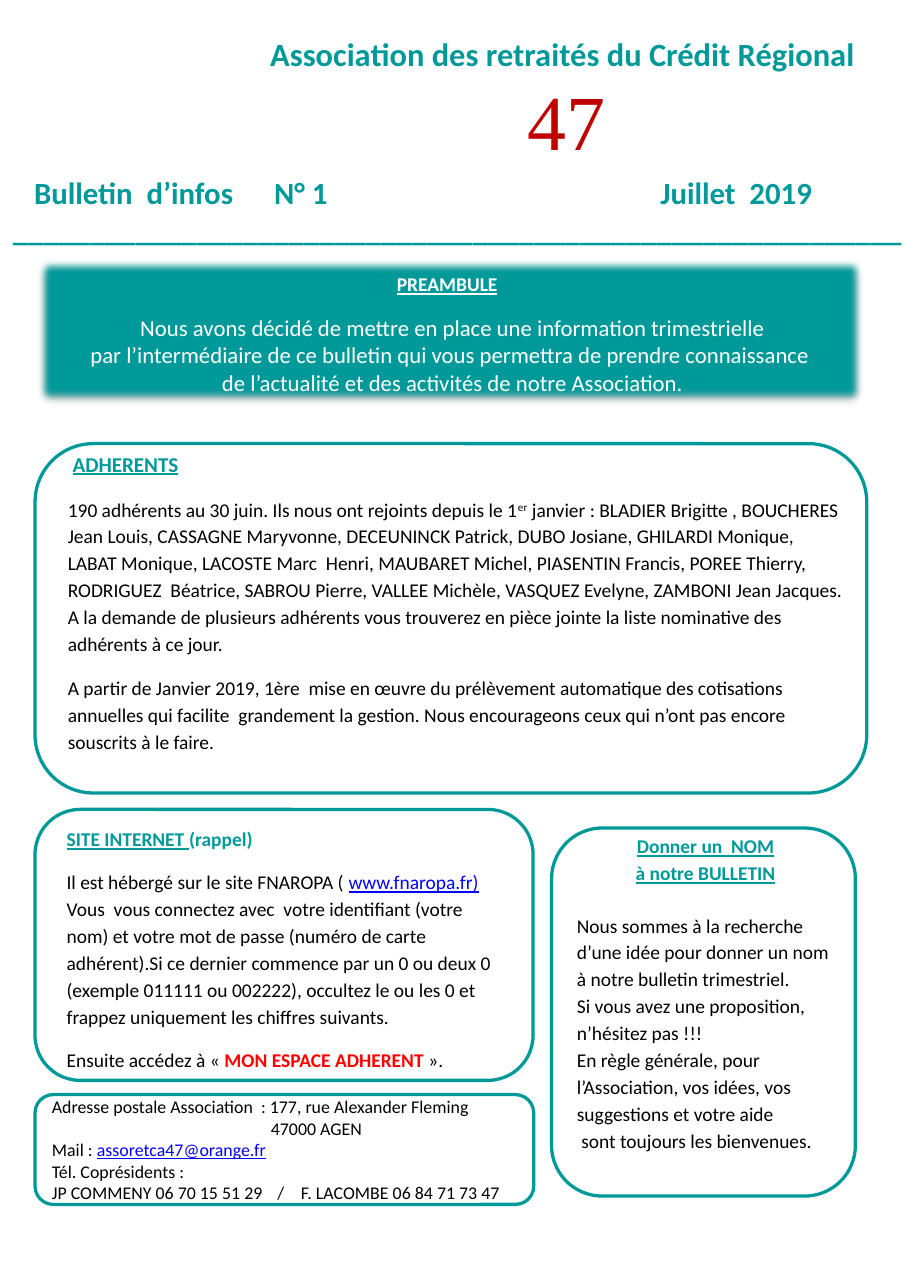
from lxml import etree
from pptx import Presentation
from pptx.dml.color import RGBColor
from pptx.enum.shapes import MSO_SHAPE
from pptx.enum.text import MSO_ANCHOR, PP_ALIGN
from pptx.oxml.ns import qn
from pptx.util import Pt

TEAL = RGBColor(0x00, 0x99, 0x99)
DARK_RED = RGBColor(0xC0, 0x00, 0x00)
RED = RGBColor(0xFF, 0x00, 0x00)
BLUE = RGBColor(0x00, 0x00, 0xFF)
BLACK = RGBColor(0x00, 0x00, 0x00)
WHITE = RGBColor(0xFF, 0xFF, 0xFF)
LEFT, CENTER = PP_ALIGN.LEFT, PP_ALIGN.CENTER
TOP, MIDDLE = MSO_ANCHOR.TOP, MSO_ANCHOR.MIDDLE
ROUNDED = MSO_SHAPE.ROUNDED_RECTANGLE
ALTERNATE = MSO_SHAPE.FLOWCHART_ALTERNATE_PROCESS
RECTANGLE = MSO_SHAPE.RECTANGLE

HEADING = dict(color=TEAL, bold=True, underline=True)
LINK = dict(color=BLUE, underline=True)


def add_para(frame, align=LEFT, spacing=1.0, after=0, tabs=()):
    """Return the frame's empty first paragraph, or a new one; tabs are in points."""
    para = frame.paragraphs[0]
    if para.runs:
        para = frame.add_paragraph()
    para.alignment = align
    para.line_spacing = spacing
    para.space_after = Pt(after)
    if tabs:
        properties = para._p.get_or_add_pPr()
        tab_list = etree.SubElement(properties, qn("a:tabLst"))
        for stop in tabs:
            etree.SubElement(tab_list, qn("a:tab"), pos=str(Pt(stop)), algn="l")
    return para


def write(para, text, size=12, color=BLACK, bold=False, underline=False,
          name="Calibri", raised=False):
    span = para.add_run()
    span.text = text
    font = span.font
    font.size, font.name = Pt(size), name
    font.bold, font.underline = bold, underline
    font.color.rgb = color
    if raised:
        span._r.get_or_add_rPr().set("baseline", "30000")


deck = Presentation()
deck.slide_width, deck.slide_height = Pt(567), Pt(793.75)
blank_layout = deck.slide_layouts[6]
page = deck.slides.add_slide(blank_layout)

# Panels
panels = {}
for key, kind, left, top, width, height in (
    ("members", ALTERNATE, 21.6, 273.4, 512.6, 215.3),
    ("website", ALTERNATE, 21.6, 498.8, 307, 167),
    ("naming", ROUNDED, 340, 510.3, 187.2, 226.8),
    ("preamble", RECTANGLE, 21.6, 158.4, 511.5, 90.7),
    ("address", ROUNDED, 21.6, 674.6, 307.4, 67.7),
):
    panel = page.shapes.add_shape(kind, Pt(left), Pt(top), Pt(width), Pt(height))
    panel.shadow.inherit = False
    panel.fill.background()
    panel.line.color.rgb = TEAL
    panel.line.width = Pt(2)
    panels[key] = panel

preamble = panels["preamble"]
preamble.fill.solid()
preamble.fill.fore_color.rgb = TEAL
preamble.line.fill.background()
effects = preamble._element.spPr.find(qn("a:effectLst"))
shadow = etree.SubElement(effects, qn("a:outerShdw"), blurRad=str(Pt(3.5)),
                          dist=str(Pt(2.2)), dir="5400000", rotWithShape="0")
shade = etree.SubElement(shadow, qn("a:srgbClr"), val=str(BLACK))
etree.SubElement(shade, qn("a:alpha"), val="32000")
etree.SubElement(effects, qn("a:softEdge"), rad=str(Pt(5)))

address = panels["address"]
address.fill.solid()
address.fill.fore_color.rgb = WHITE

# Text frames
frames = {"preamble": preamble.text_frame, "address": address.text_frame}
for key, left, top, width, height, inset in (
    ("title", 153.4, 17.3, 391, 90, 8),
    ("issue", 0, 103.2, 567, 54, 8),
    ("members", 33.8, 272.2, 500.4, 198.7, 8),
    ("website", 34, 504.2, 283.7, 161.3, 7.2),
    ("naming", 348.5, 508.5, 172.8, 208, 7.2),
):
    box = page.shapes.add_textbox(Pt(left), Pt(top), Pt(width), Pt(height))
    frames[key] = box.text_frame
    frames[key].margin_left = frames[key].margin_right = Pt(inset)
for frame in frames.values():
    frame.word_wrap = True
    frame.vertical_anchor = TOP
frames["address"].vertical_anchor = MIDDLE
frames["preamble"].margin_left = frames["preamble"].margin_right = Pt(8)

# Masthead
write(add_para(frames["title"], CENTER), "Association des retraités du Crédit Régional ",
      size=20, color=TEAL, bold=True)
write(add_para(frames["title"], CENTER), "47", size=48, color=DARK_RED,
      name="Times New Roman")
for text in ("\tBulletin  d’infos\tN° 1\tJuillet  2019", "_" * 58):
    write(add_para(frames["issue"], tabs=(13, 161, 399)), text,
          size=19, color=TEAL, bold=True)

# Preamble
para = add_para(frames["preamble"], CENTER, 1.15, 10.8)
write(para, "PREAMBULE", color=WHITE, bold=True, underline=True)
write(para, " ", size=15, color=WHITE, bold=True)
for text in (
    " Nous avons décidé de mettre en place une information trimestrielle",
    " par l’intermédiaire de ce bulletin qui vous permettra de prendre connaissance ",
    " de l’actualité et des activités de notre Association.",
):
    write(add_para(frames["preamble"], CENTER), text, size=14, color=WHITE)

# Members
para = add_para(frames["members"], spacing=1.15, after=10.8)
write(para, " ", size=13)
write(para, "ADHERENTS", size=13, **HEADING)
para = add_para(frames["members"], spacing=1.15)
write(para, "190 adhérents au 30 juin. Ils nous ont rejoints depuis le 1")
write(para, "er", raised=True)
write(para, " janvier : BLADIER Brigitte , BOUCHERES Jean Louis, CASSAGNE Maryvonne, "
            "DECEUNINCK Patrick, DUBO Josiane, GHILARDI Monique,")
for text, after in (
    ("LABAT Monique, LACOSTE Marc  Henri, MAUBARET Michel, PIASENTIN Francis, "
     "POREE Thierry, RODRIGUEZ  Béatrice, SABROU Pierre, VALLEE Michèle, "
     "VASQUEZ Evelyne, ZAMBONI Jean Jacques.", 0),
    ("A la demande de plusieurs adhérents vous trouverez en pièce jointe la liste "
     "nominative des adhérents à ce jour.", 10.8),
    ("A partir de Janvier 2019, 1ère  mise en œuvre du prélèvement automatique des "
     "cotisations annuelles qui facilite  grandement la gestion. Nous encourageons "
     "ceux qui n’ont pas encore souscrits à le faire.", 0),
):
    write(add_para(frames["members"], spacing=1.15, after=after), text)

# Website
para = add_para(frames["website"], spacing=1.15, after=10)
write(para, "SITE INTERNET ", **HEADING)
write(para, "(rappel)", color=TEAL, bold=True)
para = add_para(frames["website"], spacing=1.15, after=10)
write(para, "Il est hébergé sur le site FNAROPA ( ")
write(para, "www.fnaropa.fr)", **LINK)
write(para, " Vous  vous connectez avec  votre identifiant (votre nom) et votre mot de "
            "passe (numéro de carte adhérent).Si ce dernier commence par un 0 ou deux 0 "
            "(exemple 011111 ou 002222), occultez le ou les 0 et frappez uniquement "
            "les chiffres suivants.")
para = add_para(frames["website"], spacing=1.15)
write(para, "Ensuite accédez à « ")
write(para, "MON ESPACE ADHERENT", color=RED, bold=True)
write(para, " ».")

# Naming the bulletin
for text, after in (("Donner un  NOM", 0), ("à notre BULLETIN", 15.8)):
    write(add_para(frames["naming"], CENTER, 1.15, after), text, **HEADING)
for text in (
    "Nous sommes à la recherche d’une idée pour donner un nom",
    "à notre bulletin trimestriel.",
    "Si vous avez une proposition, n’hésitez pas !!!",
    "En règle générale, pour l’Association, vos idées, vos suggestions et votre aide",
    " sont toujours les bienvenues.",
):
    write(add_para(frames["naming"], spacing=1.15), text)

# Address
for text, link, tabs in (
    ("Adresse postale Association  : 177, rue Alexander Fleming", "", ()),
    ("\t47000 AGEN", "", (135,)),
    ("Mail : ", "assoretca47@orange.fr", ()),
    ("Tél. Coprésidents :", "", ()),
    ("JP COMMENY 06 70 15 51 29\t/\tF. LACOMBE 06 84 71 73 47", "", (139, 153.5)),
):
    para = add_para(frames["address"], tabs=tabs)
    write(para, text, size=11)
    if link:
        write(para, link, size=11, **LINK)

deck.save("out.pptx")
